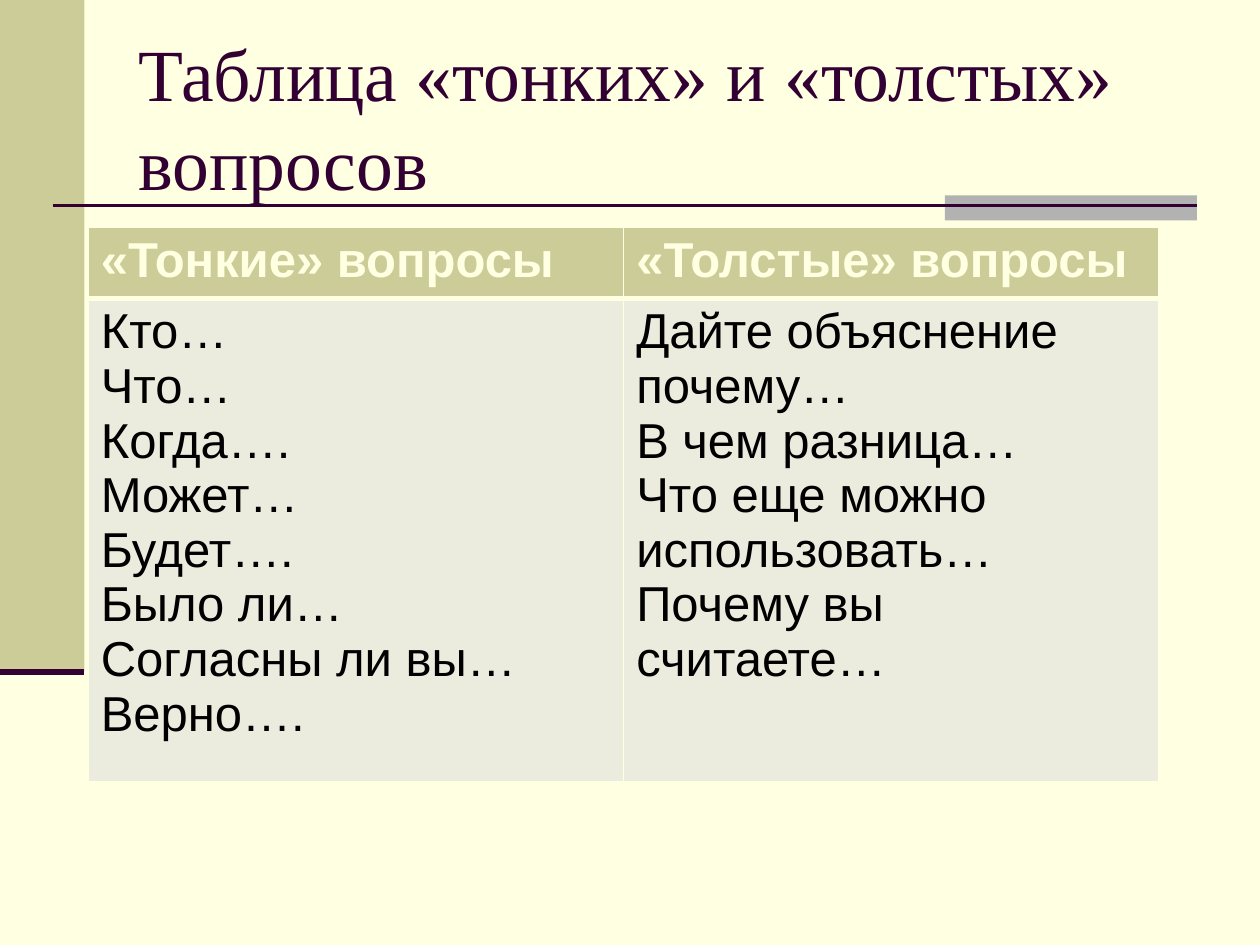
from dataclasses import dataclass
from lxml.etree import SubElement
from pptx import Presentation
from pptx.dml.color import RGBColor
from pptx.enum.shapes import MSO_CONNECTOR, MSO_SHAPE
from pptx.enum.text import MSO_ANCHOR
from pptx.oxml import parse_xml
from pptx.oxml.ns import nsdecls, qn
from pptx.slide import Slide
from pptx.util import Emu, Pt

PX = 9144
COLORS = {
    "cream": "FFFFE1",
    "olive": "CCCC99",
    "gray": "B2B2B2",
    "plum": "330033",
    "pale": "ECECDE",
    "black": "000000",
}
QUESTIONS = {
    "«Тонкие» вопросы": [
        "Кто…", "Что…", "Когда….", "Может…", "Будет….",
        "Было ли…", "Согласны ли вы…", "Верно….",
    ],
    "«Толстые» вопросы": [
        "Дайте объяснение почему…", "В чем разница…",
        "Что еще можно использовать…", "Почему вы считаете…",
    ],
}


def px(*lengths):
    return [Emu(length * PX) for length in lengths]


def rgb(color):
    return RGBColor.from_string(COLORS[color])


@dataclass
class QuestionSlide:
    """Draws the elements of one slide in a shared style."""

    slide: Slide
    title_font: str = "Times New Roman"
    table_font: str = "Arial"
    title_size: int = 42
    table_size: int = 28

    def background(self, color):
        fill = self.slide.background.fill
        fill.solid()
        fill.fore_color.rgb = rgb(color)

    def bar(self, left, top, width, height, color):
        bar = self.slide.shapes.add_shape(
            MSO_SHAPE.RECTANGLE, *px(left, top, width, height))
        bar.shadow.inherit = False
        bar.fill.solid()
        bar.fill.fore_color.rgb = rgb(color)
        bar.line.fill.background()

    def rule(self, left, right, y, width):
        rule = self.slide.shapes.add_connector(
            MSO_CONNECTOR.STRAIGHT, *px(left, y, right, y))
        rule.line.color.rgb = rgb("plum")
        rule.line.width = Pt(width)
        SubElement(rule._element.spPr, qn("a:effectLst"))

    def style_text(self, frame, font, size, color, bold=False):
        for paragraph in frame.paragraphs:
            for run in paragraph.runs:
                run.font.name = font
                run.font.size = Pt(size)
                run.font.bold = bold
                run.font.color.rgb = rgb(color)

    def title(self, left, top, width, height, text):
        title = self.slide.shapes.add_textbox(*px(left, top, width, height))
        frame = title.text_frame
        frame.word_wrap = True
        frame.vertical_anchor = MSO_ANCHOR.MIDDLE
        frame.text = text
        self.style_text(frame, self.title_font, self.title_size, "plum")

    def borders(self, cell, **widths):
        properties = cell._tc.get_or_add_tcPr()
        for index, (side, width) in enumerate(widths.items()):
            properties.insert(index, parse_xml(
                f'<a:ln{side} {nsdecls("a")} w="{Pt(width)}"><a:solidFill>'
                f'<a:srgbClr val="{COLORS["cream"]}"/></a:solidFill></a:ln{side}>'))

    def cell(self, cell, text, fill, color, bold, seam):
        cell.text_frame.text = text
        self.style_text(cell.text_frame, self.table_font, self.table_size, color, bold)
        cell.fill.solid()
        cell.fill.fore_color.rgb = rgb(fill)
        self.borders(cell, L=1, R=1, **seam)

    def table(self, left, top, width, row_heights, columns):
        table = self.slide.shapes.add_table(
            len(row_heights), len(columns),
            *px(left, top, width, sum(row_heights))).table
        for row, height in zip(table.rows, px(*row_heights)):
            row.height = height
        for index, (heading, questions) in enumerate(columns.items()):
            self.cell(table.cell(0, index), heading, "olive", "cream", True,
                      {"T": 1, "B": 3})
            self.cell(table.cell(1, index), "\n".join(questions), "pale", "black",
                      False, {"T": 3, "B": 1})


def main():
    presentation = Presentation()
    presentation.slide_width, presentation.slide_height = px(1000, 750)
    page = QuestionSlide(presentation.slides.add_slide(presentation.slide_layouts[6]))
    page.background("cream")
    page.bar(0, 0, 67, 533, "olive")
    page.bar(750, 155, 200, 20, "gray")
    page.rule(42, 950, 163, 1.5)
    page.rule(0, 67, 533, 3.5)
    page.title(100, 30, 850, 125, "Таблица «тонких» и «толстых» вопросов")
    page.table(70, 180, 850, [53, 357], QUESTIONS)
    presentation.save("out.pptx")


if __name__ == "__main__":
    main()
